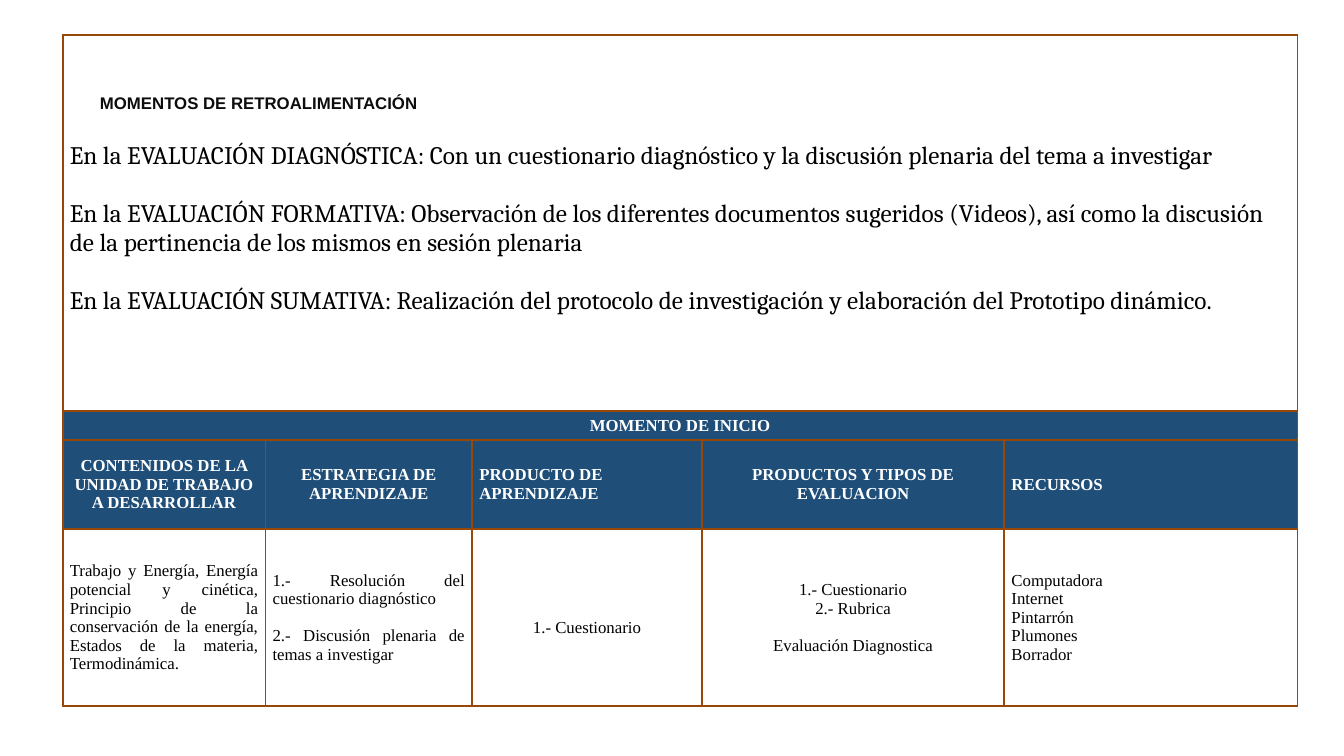
from dataclasses import dataclass

from lxml.etree import SubElement
from pptx import Presentation
from pptx.dml.color import RGBColor
from pptx.enum.text import MSO_ANCHOR, PP_ALIGN as Align
from pptx.oxml.ns import qn
from pptx.util import Cm, Pt


@dataclass(frozen=True)
class Theme:
    border: str = "984806"
    header_fill: str = "1F4E79"
    header_text: str = "FFFFFF"
    body_fill: str = "FFFFFF"
    body_text: str = "000000"
    title_text: str = "0D0D0D"
    title_font: str = "Arial"
    intro_font: str = "Cambria"
    table_font: str = "Times New Roman"
    small: float = 12
    large: float = 18
    border_width: float = 1.5


theme = Theme()


def style_cell(cell, fill):
    """Set borders, margins, anchor and fill of one cell."""
    properties = cell._tc.get_or_add_tcPr()
    for side in ("lnL", "lnR", "lnT", "lnB"):
        line = SubElement(properties, qn(f"a:{side}"), w=str(Pt(theme.border_width)))
        solid = SubElement(line, qn("a:solidFill"))
        SubElement(solid, qn("a:srgbClr"), val=theme.border)
    cell.fill.solid()
    cell.fill.fore_color.rgb = RGBColor.from_string(fill)
    cell.margin_left = cell.margin_right = Cm(0.18)
    cell.margin_top = cell.margin_bottom = 0
    cell.vertical_anchor = MSO_ANCHOR.MIDDLE


def write_line(cell, index, text, align, font, size, color, bold=False, gap=0):
    """Write paragraph number index of a cell, with gap points above it."""
    frame = cell.text_frame
    para = frame.add_paragraph() if index else frame.paragraphs[0]
    para.alignment = align
    if gap:
        para.space_before = Pt(gap)
    span = para.add_run()
    span.text = text
    span.font.name = font
    span.font.size = Pt(size)
    span.font.bold = bold
    span.font.color.rgb = RGBColor.from_string(color)
    return para


INTRO_GAP = 20.7
BODY_GAP = 13.3

feedback_lines = [
    "En la EVALUACIÓN DIAGNÓSTICA: Con un cuestionario diagnóstico y la discusión "
    "plenaria del tema a investigar",
    "En la EVALUACIÓN FORMATIVA: Observación de los diferentes documentos sugeridos "
    "(Videos), así como la discusión de la pertinencia de los mismos en sesión plenaria",
    "En la EVALUACIÓN SUMATIVA: Realización del protocolo de investigación y "
    "elaboración del Prototipo dinámico.",
]

# Width in cm, heading, heading alignment, body alignment, body lines with gap above
columns = [
    (5.11, "CONTENIDOS DE LA UNIDAD DE TRABAJO A DESARROLLAR", Align.CENTER, Align.JUSTIFY,
     [("Trabajo y Energía, Energía potencial y cinética, Principio de la conservación "
       "de la energía, Estados de la materia, Termodinámica.", 0)]),
    (5.21, "ESTRATEGIA DE APRENDIZAJE", Align.CENTER, Align.JUSTIFY,
     [("1.- Resolución del cuestionario diagnóstico", 0),
      ("2.- Discusión plenaria de temas a investigar", BODY_GAP)]),
    (5.79, "PRODUCTO DE APRENDIZAJE", Align.LEFT, Align.CENTER,
     [("1.- Cuestionario", 0)]),
    (7.62, "PRODUCTOS Y TIPOS DE EVALUACION", Align.CENTER, Align.CENTER,
     [("1.- Cuestionario", 0), ("2.- Rubrica", 0), ("Evaluación Diagnostica", BODY_GAP)]),
    (7.39, "RECURSOS", Align.LEFT, Align.LEFT,
     [(name, 0) for name in
      ("Computadora", "Internet", "Pintarrón", "Plumones", "Borrador")]),
]
row_heights = [9.47, 0.74, 2.24, 4.47]
row_fills = [theme.body_fill, theme.header_fill, theme.header_fill, theme.body_fill]

deck = Presentation()
deck.slide_width, deck.slide_height = Cm(33.87), Cm(19.05)
page = deck.slides.add_slide(deck.slide_layouts[6])

table_width = sum(column[0] for column in columns)
table = page.shapes.add_table(
    len(row_heights), len(columns), Cm(1.58), Cm(0.88),
    Cm(table_width), Cm(sum(row_heights))).table
table.first_row = False
table.horz_banding = False

for row, height, fill in zip(table.rows, row_heights, row_fills):
    row.height = Cm(height)
    for cell in row.cells:
        style_cell(cell, fill)

last = len(columns) - 1
feedback, moment = table.cell(0, 0), table.cell(1, 0)
feedback.merge(table.cell(0, last))
moment.merge(table.cell(1, last))

feedback.margin_bottom = Cm(0.89)
title = write_line(feedback, 0, "MOMENTOS DE RETROALIMENTACIÓN", Align.LEFT,
                   theme.title_font, theme.small, theme.title_text, bold=True)
title._p.get_or_add_pPr().set("indent", str(Cm(0.76)))
for index, text in enumerate(feedback_lines, 1):
    write_line(feedback, index, text, Align.LEFT, theme.intro_font, theme.large,
               theme.body_text, gap=INTRO_GAP)

write_line(moment, 0, "MOMENTO DE INICIO", Align.CENTER, theme.table_font,
           theme.small, theme.header_text, bold=True)

for number, (width, heading, heading_align, body_align, lines) in enumerate(columns):
    table.columns[number].width = Cm(width)
    write_line(table.cell(2, number), 0, heading, heading_align, theme.table_font,
               theme.small, theme.header_text, bold=True)
    for index, (text, gap) in enumerate(lines):
        write_line(table.cell(3, number), index, text, body_align, theme.table_font,
                   theme.small, theme.body_text, gap=gap)

table.cell(3, 2).margin_top = Cm(0.49)

deck.save("out.pptx")
